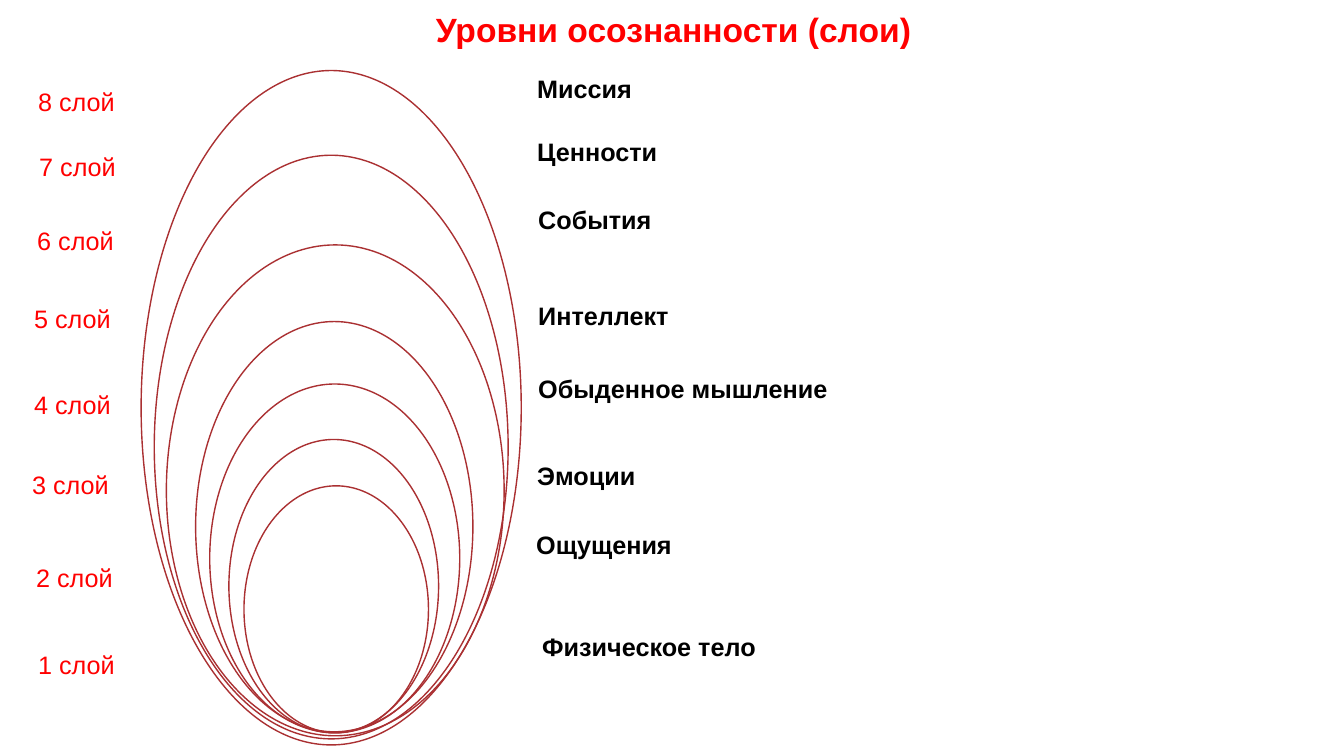
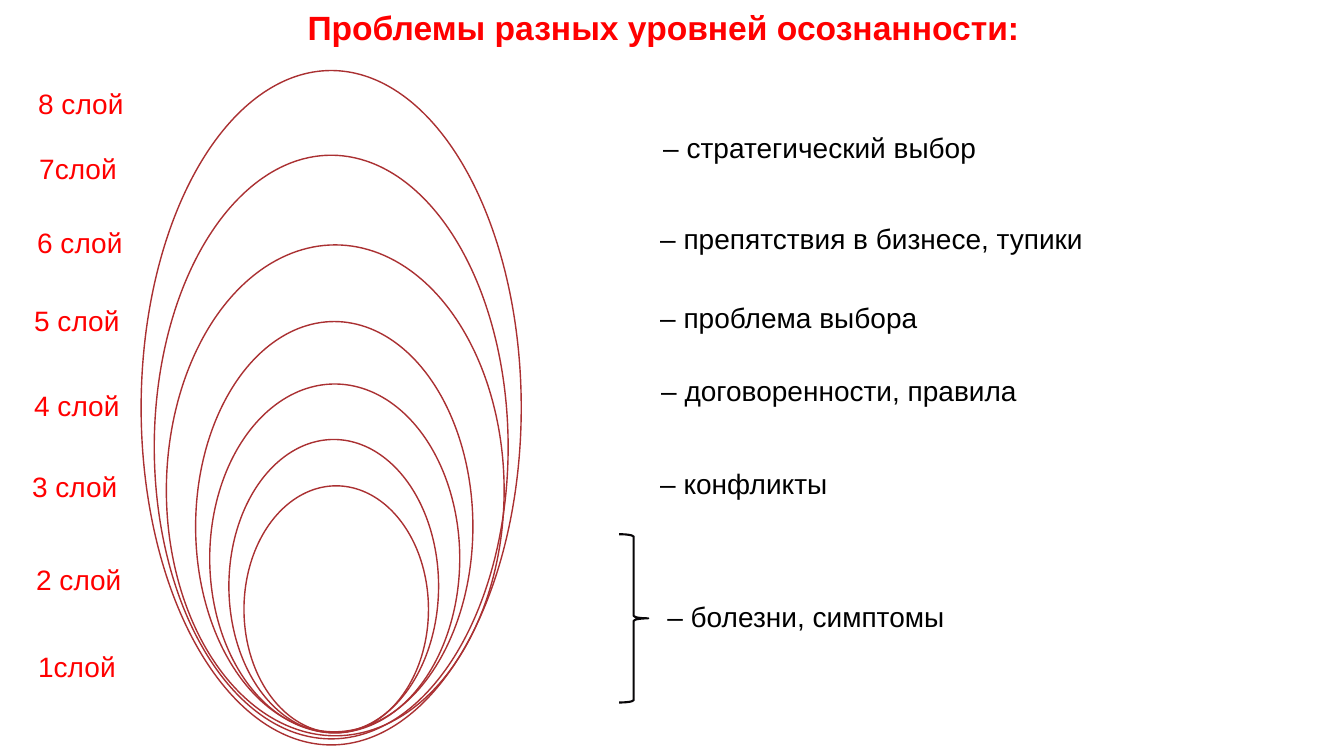
from pptx import Presentation
from pptx.dml.color import RGBColor
from pptx.enum import shapes, text
from pptx.util import Pt

PX = 9144  # 100 px to the inch
FONT = "Arial"
COLORS = {"accent": "FF0000", "text": "000000", "ring": "AA3032",
          "brace": "080608"}

# Rings, outermost first: left, top, width, height
RINGS = [
    (140, 70, 377, 669), (153, 154, 351, 579), (165, 243, 335, 487),
    (194, 319, 275, 407), (208, 381, 248, 346), (227, 436, 208, 291),
    (242, 482, 183, 245),
]
# Left and top of the layer labels, from layer 8 down to layer 1
LAYER_SPOTS = [(28, 81), (29, 145), (27, 219), (24, 296),
               (24, 381), (22, 461), (26, 553), (28, 639)]
LAYER_WIDTH, NOTE_WIDTH = 115, 600

SLIDES = [
    {
        "title": "Уровни осознанности (слои)",
        "title_at": (98, 13),
        "size": 18,
        "bold_notes": True,
        "layers": ["8 слой", "7 слой", "6 слой", "5 слой",
                   "4 слой", "3 слой", "2 слой", "1 слой"],
        "notes": [
            ("Миссия", 523, 68), ("Ценности", 523, 130),
            ("События", 524, 198), ("Интеллект", 524, 293),
            ("Обыденное мышление", 524, 365), ("Эмоции", 523, 452),
            ("Ощущения", 522, 520), ("Физическое тело", 528, 621),
        ],
        "brace": None,
    },
    {
        "title": "Проблемы разных уровней осознанности:",
        "title_at": (88, 11),
        "size": 20,
        "bold_notes": False,
        "layers": ["8 слой", "7слой", "6 слой", "5 слой",
                   "4 слой", "3 слой", "2 слой", "1слой"],
        "notes": [
            ("– стратегический выбор", 648, 125),
            ("– препятствия в бизнесе, тупики", 645, 215),
            ("– проблема выбора", 645, 293),
            ("– договоренности, правила", 646, 366),
            ("– конфликты", 645, 458),
            ("– болезни, симптомы", 652, 590),
        ],
        "brace": (614, 530, 29, 167),
    },
]


def px(*lengths):
    return [n * PX for n in lengths]


def format_runs(p, size, color, bold=False):
    for r in p.runs:
        r.font.name = FONT
        r.font.size = Pt(size)
        r.font.bold = bold
        r.font.color.rgb = RGBColor.from_string(COLORS[color])


def add_title(s, title, left, top):
    sp = s.shapes.title
    sp.left, sp.top, sp.width, sp.height = px(left, top, 1150, 145)
    tf = sp.text_frame
    tf.text = title
    tf.word_wrap = True
    tf.auto_size = text.MSO_AUTO_SIZE.NONE
    tf.vertical_anchor = text.MSO_ANCHOR.TOP
    tf.margin_left, tf.margin_top, tf.margin_right, tf.margin_bottom = px(0, 0, 10, 5)
    p = tf.paragraphs[0]
    p.alignment = text.PP_ALIGN.CENTER
    p.line_spacing = 0.9
    format_runs(p, 24, "accent", True)


def add_label(s, label, left, top, width, size, color, bold=False):
    height = 40 if size == 18 else 44
    tf = s.shapes.add_textbox(*px(left, top, width, height)).text_frame
    tf.word_wrap = True
    tf.text = label
    format_runs(tf.paragraphs[0], size, color, bold)


def add_outline(s, kind, box, color, weight):
    sp = s.shapes.add_shape(kind, *px(*box))
    sp.shadow.inherit = False
    sp.fill.background()
    sp.line.color.rgb = RGBColor.from_string(COLORS[color])
    sp.line.width = Pt(weight)


def build_slide(prs, data):
    s = prs.slides.add_slide(prs.slide_layouts[5])
    add_title(s, data["title"], *data["title_at"])

    # Nested layers
    for box in RINGS:
        add_outline(s, shapes.MSO_SHAPE.OVAL, box, "ring", 1)

    # Layer names on the left, meanings on the right
    for label, (left, top) in zip(data["layers"], LAYER_SPOTS):
        add_label(s, label, left, top, LAYER_WIDTH, data["size"], "accent")
    for label, left, top in data["notes"]:
        add_label(s, label, left, top, NOTE_WIDTH, data["size"], "text",
                  data["bold_notes"])

    if data["brace"]:
        add_outline(s, shapes.MSO_SHAPE.RIGHT_BRACE, data["brace"], "brace", 1.5)


def main():
    prs = Presentation()
    prs.slide_width, prs.slide_height = px(1333, 750)
    for data in SLIDES:
        build_slide(prs, data)
    prs.save("out.pptx")


if __name__ == "__main__":
    main()
